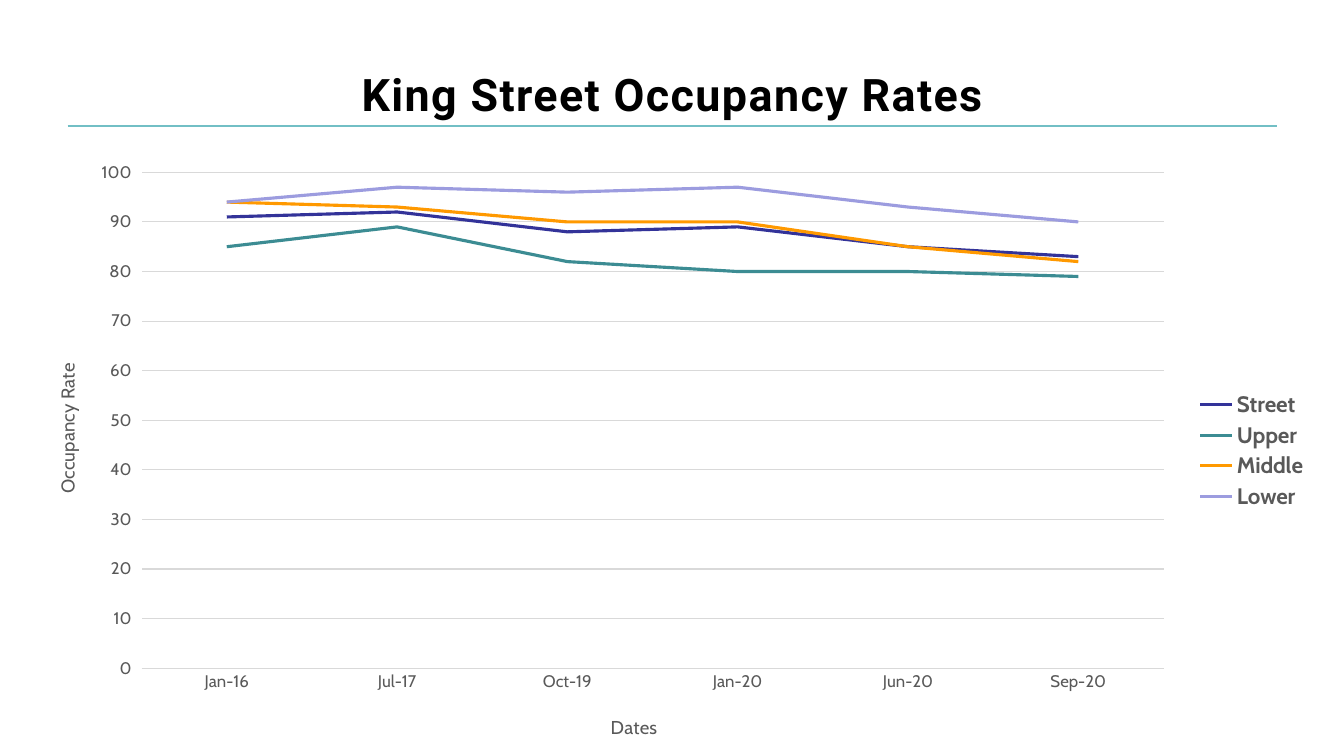
from pptx import Presentation
from pptx.chart.data import CategoryChartData
from pptx.dml.color import RGBColor
from pptx.enum.chart import XL_CHART_TYPE, XL_LEGEND_POSITION, XL_TICK_MARK
from pptx.enum.shapes import MSO_CONNECTOR
from pptx.enum.text import MSO_ANCHOR, PP_ALIGN
from pptx.oxml import parse_xml
from pptx.oxml.ns import nsdecls, qn
from pptx.util import Pt

LINE_CHART = XL_CHART_TYPE.LINE
LEGEND_RIGHT = XL_LEGEND_POSITION.RIGHT
TICK_NONE, TICK_OUT = XL_TICK_MARK.NONE, XL_TICK_MARK.OUTSIDE
STRAIGHT = MSO_CONNECTOR.STRAIGHT
MIDDLE = MSO_ANCHOR.MIDDLE
CENTER = PP_ALIGN.CENTER

BLACK = RGBColor(0x00, 0x00, 0x00)
GRAY = RGBColor(0x59, 0x59, 0x59)
GRID = RGBColor(0xD9, 0xD9, 0xD9)
AQUA = RGBColor(0x72, 0xBF, 0xC5)
NAVY = RGBColor(0x33, 0x33, 0x99)
TEAL = RGBColor(0x3C, 0x8C, 0x93)
ORANGE = RGBColor(0xFF, 0x99, 0x00)
LILAC = RGBColor(0x9C, 0x9C, 0xDF)

HEAD_FONT, BODY_FONT = "Roboto", "Cabin"
EMU_PER_PX = 9144  # 100 px to the inch

DATES = ["Jan-16", "Jul-17", "Oct-19", "Jan-20", "Jun-20", "Sep-20"]
OCCUPANCY = [
    ("Street", NAVY, [91, 92, 88, 89, 85, 83]),
    ("Upper", TEAL, [85, 89, 82, 80, 80, 79]),
    ("Middle", ORANGE, [94, 93, 90, 90, 85, 82]),
    ("Lower", LILAC, [94, 97, 96, 97, 93, 90]),
]


def px(*lengths):
    return [n * EMU_PER_PX for n in lengths]


def style_font(font, size, color, name=BODY_FONT, bold=False):
    font.size, font.name, font.bold = Pt(size), name, bold
    font.color.rgb = color


def style_line(line, color, width):
    line.color.rgb = color
    line.width = Pt(width)


def write(tf, text, size, color, name=BODY_FONT, bold=False, align=CENTER, spacing=0):
    """Put one formatted line of text in a frame; spacing is in points."""
    p = tf.paragraphs[0]
    p.alignment = align
    r = p.add_run()
    r.text = text
    style_font(r.font, size, color, name, bold)
    if spacing:
        r.font._element.set("spc", str(spacing * 100))


def add_text(slide, box, text, **fmt):
    tf = slide.shapes.add_textbox(*px(*box)).text_frame
    tf.word_wrap = True
    tf.vertical_anchor = MIDDLE
    write(tf, text, **fmt)


def add_rule(slide, ends, color, width):
    cn = slide.shapes.add_connector(STRAIGHT, *px(*ends))
    style_line(cn.line, color, width)
    cn._element.spPr.append(parse_xml(f"<a:effectLst {nsdecls('a')}/>"))


def place(parent, index, target="", **fractions):
    """Fix a chart part at fractions of the chart area."""
    for old in parent.findall(qn("c:layout")):
        parent.remove(old)
    modes = "".join(f'<c:{k}Mode val="edge"/>' for k in "xy")
    values = "".join(f'<c:{k} val="{v}"/>' for k, v in fractions.items())
    parent.insert(index, parse_xml(
        f"<c:layout {nsdecls('c')}><c:manualLayout>{target}{modes}{values}"
        "</c:manualLayout></c:layout>"))


def style_axis(axis, title, tick, x, y, rotation=0):
    style_font(axis.tick_labels.font, 12, GRAY)
    axis.major_tick_mark, axis.minor_tick_mark = tick, TICK_NONE
    tf = axis.axis_title.text_frame
    write(tf, title, 13.3, GRAY)
    tf._txBody.bodyPr.set("rot", str(rotation * 60000))
    place(axis.axis_title._element, 1, x=x, y=y)


def add_occupancy_chart(slide, box):
    data = CategoryChartData()
    data.categories = DATES
    for name, _, rates in OCCUPANCY:
        data.add_series(name, rates)
    chart = slide.shapes.add_chart(LINE_CHART, *px(*box), data).chart
    style_font(chart.font, 10, BLACK)
    chart.has_title = False

    for series, (_, color, _) in zip(chart.plots[0].series, OCCUPANCY):
        series.smooth = False
        style_line(series.format.line, color, 2.25)
    chart.plots[0].vary_by_categories = False

    style_axis(chart.category_axis, "Dates", TICK_NONE, 0.45, 0.93)
    style_line(chart.category_axis.format.line, GRID, 0.75)
    rates_axis = chart.value_axis
    style_axis(rates_axis, "Occupancy Rate", TICK_OUT, 0.02, 0.35, rotation=-90)
    rates_axis.minimum_scale, rates_axis.maximum_scale = 0, 100
    rates_axis.major_unit = 10
    rates_axis.format.line.fill.background()
    style_line(rates_axis.major_gridlines.format.line, GRID, 0.75)

    chart.has_legend = True
    chart.legend.position = LEGEND_RIGHT
    chart.legend.include_in_layout = False
    style_font(chart.legend.font, 16, GRAY, bold=True)
    plot_area = chart._chartSpace.chart.plotArea
    place(plot_area, 0, '<c:layoutTarget val="inner"/>', x=0.09, y=0.04, w=0.79, h=0.82)


def main():
    prs = Presentation()
    prs.slide_width, prs.slide_height = px(1333, 750)
    slide = prs.slides.add_slide(prs.slide_layouts[6])
    add_rule(slide, (67, 125, 1267, 125), AQUA, 1)
    add_text(slide, (67, 30, 1200, 125), "King Street Occupancy Rates",
             size=32, color=BLACK, name=HEAD_FONT, bold=True, spacing=1)
    add_occupancy_chart(slide, (25, 147, 1283, 600))
    prs.save("out.pptx")


if __name__ == "__main__":
    main()
